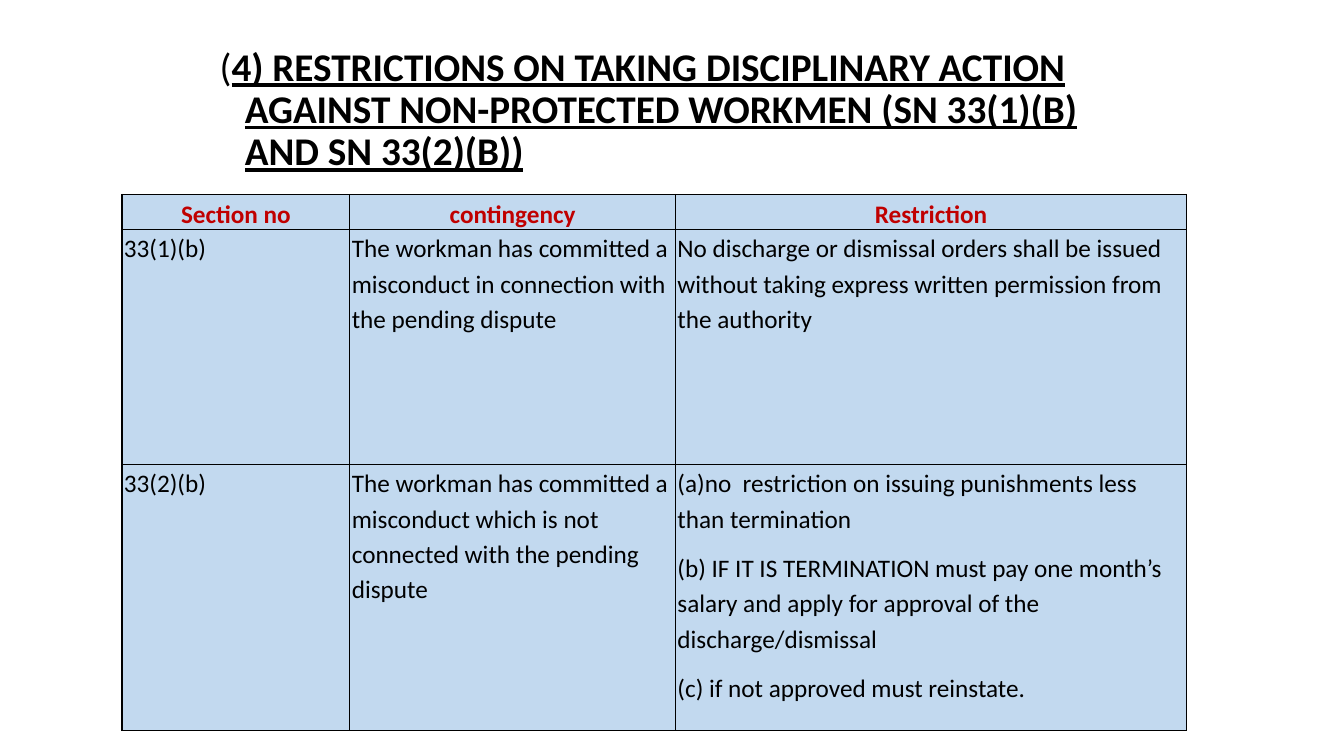
from dataclasses import dataclass

import lxml.etree
import pptx
import pptx.dml.color
import pptx.enum.text
import pptx.oxml
import pptx.oxml.ns
import pptx.util

INK = "000000"
RED = "C00000"
BLUE = "9DC3E6"
ALPHA = 62000
ALIGN = pptx.enum.text.PP_ALIGN
Inches = pptx.util.Inches
Pt = pptx.util.Pt
qn = pptx.oxml.ns.qn


@dataclass
class Row:
    height: float
    texts: tuple[str, ...]
    color: str = INK
    bold: bool = False
    align: ALIGN = ALIGN.LEFT


TITLE = (
    "4) RESTRICTIONS ON TAKING DISCIPLINARY ACTION AGAINST "
    "NON-PROTECTED WORKMEN (SN 33(1)(B) AND SN 33(2)(B))"
)
WIDTHS = (2.26, 3.23, 5.07)
ROWS = (
    Row(0.31, ("Section no", "contingency", "Restriction"), RED, True, ALIGN.CENTER),
    Row(2.33, (
        "33(1)(b)",
        "The workman has committed a misconduct in connection with the pending dispute",
        "No discharge or dismissal orders shall be issued without taking express "
        "written permission from the authority",
    )),
    Row(2.64, (
        "33(2)(b)",
        "The workman has committed a misconduct which is not connected with the "
        "pending dispute",
        "(a)no  restriction on issuing punishments less than termination\n"
        "(b) IF IT IS TERMINATION must pay one month’s salary and apply for approval "
        "of the discharge/dismissal\n"
        "(c) if not approved must reinstate.",
    )),
)


def rgb(code: str) -> pptx.dml.color.RGBColor:
    return pptx.dml.color.RGBColor.from_string(code)


def assign(target, values: dict) -> None:
    for name, value in values.items():
        setattr(target, name, value)


def add_run(para, text: str, size: int, color: str, **extra) -> None:
    run = para.add_run()
    run.text = text
    assign(run.font, {"name": "Calibri", "size": Pt(size), **extra})
    run.font.color.rgb = rgb(color)


def draw_title(slide) -> None:
    box = slide.shapes.add_textbox(Inches(2.08), Inches(0.42), Inches(9.08), Inches(6.28))
    frame = box.text_frame
    frame.word_wrap = True
    para = frame.paragraphs[0]
    assign(para, {"line_spacing": 0.9, "space_before": Pt(10)})
    props = para._p.get_or_add_pPr()
    props.set("marL", str(Inches(0.25)))
    props.set("indent", str(Inches(-0.25)))
    add_run(para, "(", 28, INK)
    add_run(para, TITLE, 28, INK, bold=True, underline=True)


def style_cell(cell) -> None:
    assign(cell, {
        "margin_left": Inches(0.02), "margin_right": Inches(0.02),
        "margin_top": 0, "margin_bottom": 0,
    })
    cell.fill.solid()
    cell.fill.fore_color.rgb = rgb(BLUE)
    props = cell._tc.get_or_add_tcPr()
    tint = props.find(qn("a:solidFill")).find(qn("a:srgbClr"))
    lxml.etree.SubElement(tint, qn("a:alpha")).set("val", str(ALPHA))
    for place, side in enumerate("LRTB"):
        line = pptx.oxml.parse_xml(
            f'<a:ln{side} {pptx.oxml.ns.nsdecls("a")} w="{Pt(1)}"><a:solidFill>'
            f'<a:srgbClr val="{INK}"/></a:solidFill></a:ln{side}>'
        )
        props.insert(place, line)


def fill_cell(cell, text: str, row: Row) -> None:
    style_cell(cell)
    frame = cell.text_frame
    for place, part in enumerate(text.split("\n")):
        para = frame.add_paragraph() if place else frame.paragraphs[0]
        assign(para, {
            "alignment": row.align, "line_spacing": 1.15,
            "space_before": Pt(0), "space_after": Pt(10),
        })
        add_run(para, part, 18, row.color, bold=row.bold)


def draw_table(slide) -> None:
    high = sum(row.height for row in ROWS)
    table = slide.shapes.add_table(
        len(ROWS), len(WIDTHS), Inches(1.21), Inches(1.93),
        Inches(sum(WIDTHS)), Inches(high),
    ).table
    assign(table, {"first_row": False, "horz_banding": False})
    for column, width in zip(table.columns, WIDTHS):
        column.width = Inches(width)
    for line, row in zip(table.rows, ROWS):
        line.height = Inches(row.height)
        for cell, text in zip(line.cells, row.texts):
            fill_cell(cell, text, row)


def main() -> None:
    deck = pptx.Presentation()
    assign(deck, {"slide_width": Inches(13.33), "slide_height": Inches(7.5)})
    slide = deck.slides.add_slide(deck.slide_layouts[6])
    draw_title(slide)
    draw_table(slide)
    deck.save("out.pptx")


if __name__ == "__main__":
    main()
